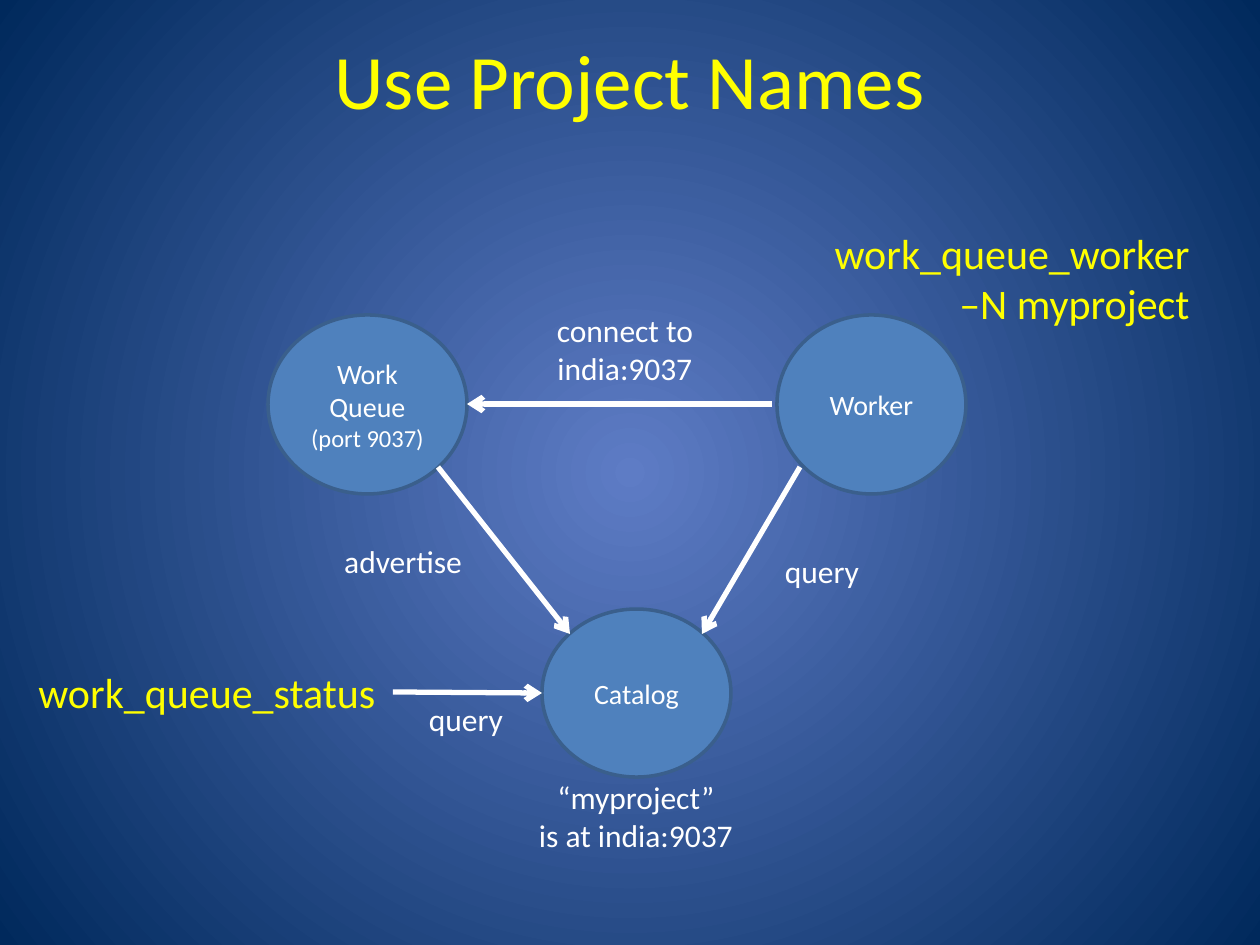
from lxml import etree
from pptx import Presentation
from pptx import util as u
from pptx.dml.color import RGBColor
from pptx.enum import shapes, text
from pptx.oxml.ns import qn

PX = 914400 / 126
WHITE = RGBColor(0xFF, 0xFF, 0xFF)
YELLOW = RGBColor(0xFF, 0xFF, 0x00)
BLUE = RGBColor(0x4F, 0x81, 0xBD)
EDGE = RGBColor(0x3A, 0x5F, 0x8C)
GLOW = RGBColor(0x5E, 0x7C, 0xC5)
NAVY = RGBColor(0x00, 0x29, 0x5C)
LEFT, MID, RIGHT = text.PP_ALIGN.LEFT, text.PP_ALIGN.CENTER, text.PP_ALIGN.RIGHT


def emu(*px):
    return [u.Emu(round(n * PX)) for n in px]


def write(frame, lines, sizes, color, align):
    """Fill a text frame with one paragraph per line."""
    frame.text = "\n".join(lines)
    for para, size in zip(frame.paragraphs, sizes):
        para.alignment = align
        para.font.name = "Calibri"
        para.font.size = u.Pt(size)
        para.font.color.rgb = color


deck = Presentation()
deck.slide_width, deck.slide_height = emu(1260, 945)
slide = deck.slides.add_slide(deck.slide_layouts[6])

# Background: radial glow from the centre
fill = slide.background.fill
fill.gradient()
for stop, color, pos in zip(fill.gradient_stops, (GLOW, NAVY), (0, 1)):
    stop.color.rgb = color
    stop.position = pos
grad = next(slide.element.iter(qn("a:gradFill")))
grad.remove(grad.find(qn("a:lin")))
round_fill = etree.SubElement(grad, qn("a:path"))
round_fill.set("path", "circle")
rect = etree.SubElement(round_fill, qn("a:fillToRect"))
for side in "ltrb":
    rect.set(side, "50000")

# Nodes
nodes = [
    ((268, 315, 199, 179), ["Work Queue", "(port 9037)"], [16, 14]),
    ((777, 315, 189, 179), ["Worker"], [16]),
    ((542, 609, 189, 168), ["Catalog"], [16]),
]
for box, lines, sizes in nodes:
    node = slide.shapes.add_shape(shapes.MSO_SHAPE.OVAL, *emu(*box))
    node.shadow.inherit = False
    node.fill.solid()
    node.fill.fore_color.rgb = BLUE
    node.line.color.rgb = EDGE
    node.line.width = u.Pt(2)
    node.text_frame.vertical_anchor = text.MSO_ANCHOR.MIDDLE
    write(node.text_frame, lines, sizes, WHITE, MID)

# Arrows
arrows = [
    (772, 404, 467, 404),
    (438, 467, 570, 634),
    (800, 467, 702, 634),
    (393, 692, 542, 693),
]
for ends in arrows:
    arrow = slide.shapes.add_connector(shapes.MSO_CONNECTOR.STRAIGHT, *emu(*ends))
    arrow.line.color.rgb = WHITE
    arrow.line.width = u.Pt(3)
    tip = etree.SubElement(arrow.line._get_or_add_ln(), qn("a:tailEnd"))
    tip.set("type", "arrow")
    etree.SubElement(arrow._element.spPr, qn("a:effectLst"))

# Title, commands and arrow labels
labels = [
    ((63, 0, 1134, 158), ["Use Project Names"], 44, YELLOW, MID),
    ((818, 221, 384, 115), ["work_queue_worker", "–N myproject"], 24, YELLOW, RIGHT),
    ((26, 660, 364, 63), ["work_queue_status"], 24, YELLOW, LEFT),
    ((543, 305, 164, 89), ["connect to", "india:9037"], 18, WHITE, MID),
    ((331, 536, 144, 50), ["advertise"], 18, WHITE, MID),
    ((772, 546, 100, 50), ["query"], 18, WHITE, MID),
    ((416, 694, 100, 50), ["query"], 18, WHITE, MID),
    ((525, 772, 222, 89), ["“myproject”", "is at india:9037"], 18, WHITE, MID),
]
for box, lines, size, color, align in labels:
    frame = slide.shapes.add_textbox(*emu(*box)).text_frame
    frame.word_wrap = False
    if size == 44:
        frame.vertical_anchor = text.MSO_ANCHOR.MIDDLE
    write(frame, lines, [size] * len(lines), color, align)

deck.save("out.pptx")
